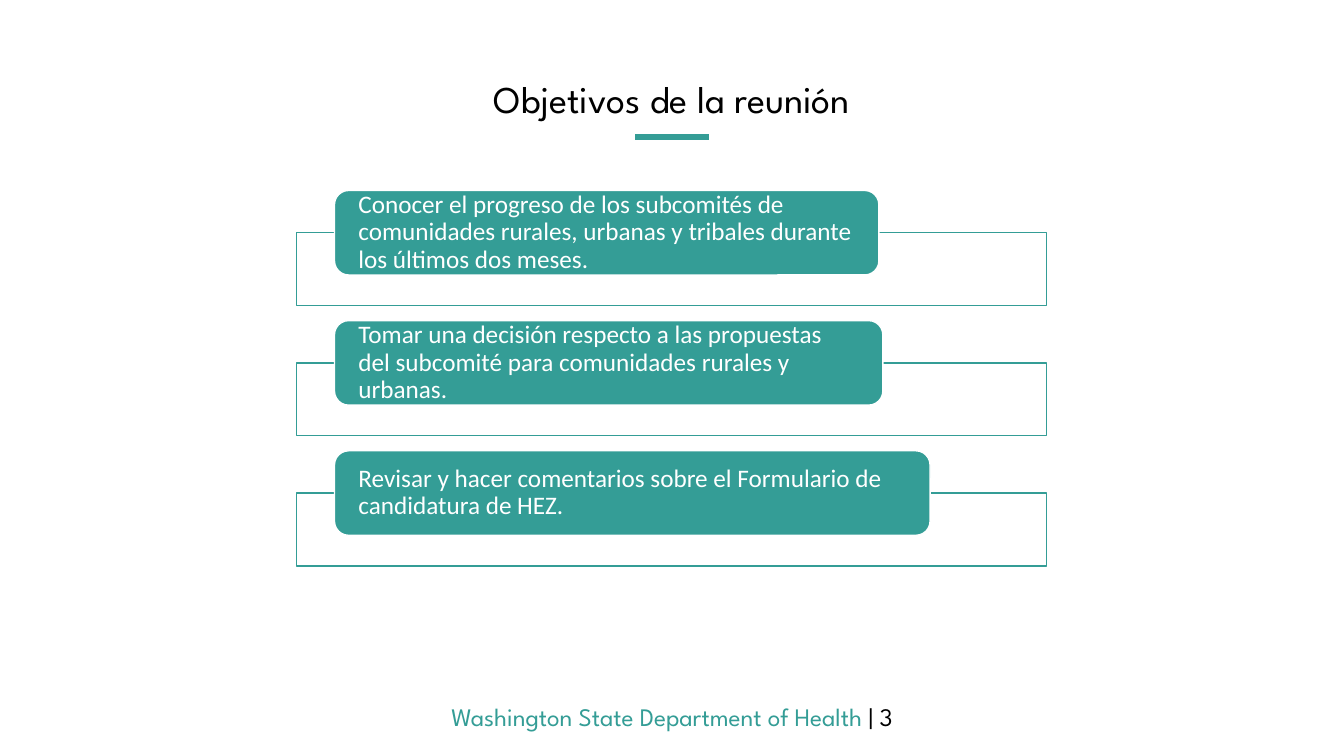
from dataclasses import dataclass

from lxml import etree
from pptx import Presentation
from pptx import util as u
from pptx.dml.color import RGBColor
from pptx.enum import shapes, text
from pptx.oxml import ns


@dataclass(frozen=True)
class Theme:
    teal: RGBColor = RGBColor(0x34, 0x9D, 0x96)
    white: RGBColor = RGBColor(0xFF, 0xFF, 0xFF)
    black: RGBColor = RGBColor(0x00, 0x00, 0x00)
    heading_font: str = "League Spartan"
    body_font: str = "Calibri"
    title_size: int = 27
    body_size: int = 18
    outline: int = 1
    accent: int = 4


@dataclass(frozen=True)
class Box:
    left: float
    top: float
    width: float
    height: float

    def lengths(self):
        return [u.Cm(n) for n in (self.left, self.top, self.width, self.height)]


THEME = Theme()
SLIDE_WIDTH, SLIDE_HEIGHT = 33.87, 19.05
OBJECTIVES = [
    ("Conocer el progreso de los subcomités de comunidades rurales, urbanas "
     "y tribales durante los últimos dos meses.", 13.72),
    ("Tomar una decisión respecto a las propuestas del subcomité para "
     "comunidades rurales y urbanas.", 13.82),
    ("Revisar y hacer comentarios sobre el Formulario de candidatura de HEZ.", 15.01),
]


def add_run(paragraph, wording, font, size, color):
    run = paragraph.add_run()
    run.text = wording
    run.font.name = font
    run.font.size = u.Pt(size)
    run.font.color.rgb = color


def add_centred_text(slide, box, runs, anchor, line_spacing):
    frame = slide.shapes.add_textbox(*box.lengths()).text_frame
    frame.word_wrap = True
    frame.vertical_anchor = anchor
    paragraph = frame.paragraphs[0]
    paragraph.alignment = text.PP_ALIGN.CENTER
    paragraph.line_spacing = line_spacing
    for wording, size, color in runs:
        add_run(paragraph, wording, THEME.heading_font, size, color)


def add_panel(slide, kind, box, fill, line):
    shape = slide.shapes.add_shape(kind, *box.lengths())
    shape.shadow.inherit = False
    shape.fill.solid()
    shape.fill.fore_color.rgb = fill
    shape.line.color.rgb = line
    shape.line.width = u.Pt(THEME.outline)
    return shape


def add_title(slide, box):
    add_centred_text(
        slide, box, [("Objetivos de la reunión", THEME.title_size, THEME.black)],
        text.MSO_ANCHOR.MIDDLE, 0.9)
    rule_width = 1.86
    left = box.left + (box.width - rule_width) / 2
    y = u.Cm(box.top + box.height + 0.22)
    rule = slide.shapes.add_connector(
        shapes.MSO_CONNECTOR.STRAIGHT, u.Cm(left), y, u.Cm(left + rule_width), y)
    rule.line.color.rgb = THEME.teal
    rule.line.width = u.Pt(THEME.accent)
    etree.SubElement(rule._element.spPr, ns.qn("a:effectLst"))


def add_objective(slide, box, wording, label_width):
    label_height = 2.13
    frame_top = label_height / 2
    frame = add_panel(
        slide, shapes.MSO_SHAPE.RECTANGLE,
        Box(box.left, box.top + frame_top, box.width, box.height - frame_top),
        THEME.white, THEME.teal)
    color = frame._element.spPr.find(ns.qn("a:solidFill"))[0]
    etree.SubElement(color, ns.qn("a:alpha"), val="90000")

    label = add_panel(
        slide, shapes.MSO_SHAPE.ROUNDED_RECTANGLE,
        Box(box.left + 0.96, box.top, label_width, label_height),
        THEME.teal, THEME.white)
    content = label.text_frame
    content.word_wrap = True
    content.vertical_anchor = text.MSO_ANCHOR.MIDDLE
    content.margin_left = content.margin_right = u.Cm(0.5)
    content.margin_top = content.margin_bottom = 0
    paragraph = content.paragraphs[0]
    paragraph.alignment = text.PP_ALIGN.LEFT
    paragraph.line_spacing = 0.9
    add_run(paragraph, wording, THEME.body_font, THEME.body_size, THEME.white)


def add_objectives(slide, box):
    gap = 0.38
    height = (box.height - gap * (len(OBJECTIVES) - 1)) / len(OBJECTIVES)
    for index, (wording, label_width) in enumerate(OBJECTIVES):
        top = box.top + index * (height + gap)
        add_objective(slide, Box(box.left, top, box.width, height), wording, label_width)


def add_footer(slide, box):
    add_centred_text(
        slide, box,
        [("Washington State Department of Health ", THEME.body_size, THEME.teal),
         ("| 3", THEME.body_size, THEME.black)],
        text.MSO_ANCHOR.TOP, 1.0)


def main():
    presentation = Presentation()
    presentation.slide_width = u.Cm(SLIDE_WIDTH)
    presentation.slide_height = u.Cm(SLIDE_HEIGHT)
    slide = presentation.slides.add_slide(presentation.slide_layouts[6])
    add_title(slide, Box(0, 1.88, SLIDE_WIDTH, 1.35))
    add_objectives(slide, Box(7.47, 4.8, 18.9, 9.46))
    add_footer(slide, Box(0, 17.55, SLIDE_WIDTH, 1.02))
    presentation.save("out.pptx")


if __name__ == "__main__":
    main()
